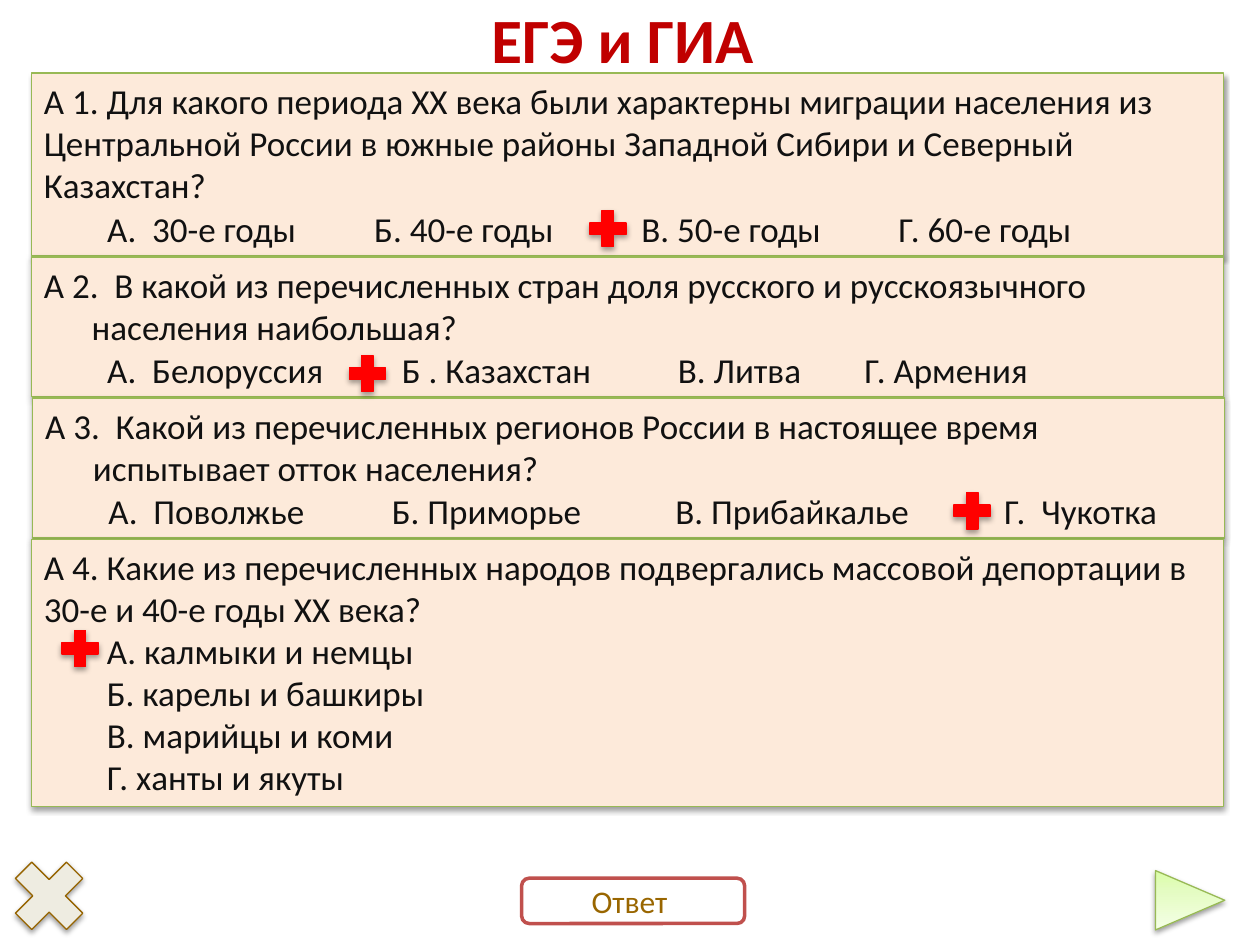
import pptx
import pptx.util
import pptx.dml.color
import pptx.enum.shapes
import pptx.enum.text
import pptx.oxml
import pptx.oxml.ns

HUE = {"title": "C00000", "card": "FDEADA", "edge": "98B955", "ink": "111111",
       "mark": "FF0000", "cross": "EEECE1", "brown": "966400", "white": "FFFFFF",
       "red": "C0504D", "label": "996600", "shade": "000000"}
FADE = ((0, "DAFDA7"), (35, "E4FCC2"), (100, "F5FFE7"))
KIND = pptx.enum.shapes.MSO_SHAPE
ALIGN = pptx.enum.text.PP_ALIGN
ANCHOR = pptx.enum.text.MSO_ANCHOR
NS = pptx.oxml.ns.nsdecls("a")

# Grid of 100 columns by 75 rows
CELL = pptx.util.Inches(0.1)
MARK = 3.9
LINE = 3.33
PAD = 0.5

# Left, top, height, question, hang, options, their columns (none: stacked),
# place of the mark; columns and marks count from the corner of the card
CARDS = (
    (2.5, 5.8, 14.5, "А 1. Для какого периода XX века были характерны миграции "
     "населения из Центральной России в южные районы Западной Сибири и Северный "
     "Казахстан?", 0,
     ("А.  30-е годы", "Б. 40-е годы", "В. 50-е годы", "Г. 60-е годы"),
     (6, 27.2, 48.4, 68.8), (43.8, 10.4)),
    (2.5, 20.4, 11.1, "А 2.  В какой из перечисленных стран доля русского и "
     "русскоязычного населения наибольшая?", 3.8,
     ("А.  Белоруссия", "Б . Казахстан", "В. Литва", "Г. Армения"),
     (6, 29.4, 51.3, 66.1), (24.7, 7.3)),
    (2.6, 31.6, 11.1, "А 3.  Какой из перечисленных регионов России в настоящее "
     "время испытывает отток населения?", 3.8,
     ("А.  Поволжье", "Б. Приморье", "В. Прибайкалье", "Г.  Чукотка"),
     (6, 28.5, 51, 77.1), (72.6, 7)),
    (2.5, 42.8, 21.2, "А 4. Какие из перечисленных народов подвергались массовой "
     "депортации в 30-е и 40-е годы XX века?", 0,
     ("А. калмыки и немцы", "Б. карелы и башкиры", "В. марийцы и коми",
      "Г. ханты и якуты"), (), (1.9, 6.7)),
)


def span(num):
    return pptx.util.Emu(round(num * CELL))


def rgb(name):
    return pptx.dml.color.RGBColor.from_string(HUE[name])


def put(item, **form):
    for key, val in form.items():
        setattr(item, key, val)


def shade(shape, alpha=38, dist=1.6):
    """Cast a soft shadow straight down."""
    cast = pptx.oxml.parse_xml(
        f'<a:outerShdw {NS} blurRad="39370" dist="{round(dist * 12700)}" dir="5400000" '
        f'rotWithShape="0"><a:srgbClr val="{HUE["shade"]}">'
        f'<a:alpha val="{alpha * 1000}"/></a:srgbClr></a:outerShdw>')
    shape._element.spPr.find(pptx.oxml.ns.qn("a:effectLst")).append(cast)


def draw(shapes, kind, box, fill, line, width=0.75):
    shape = shapes.add_shape(kind, *map(span, box))
    shape.shadow.inherit = False
    shape.fill.solid()
    shape.fill.fore_color.rgb = rgb(fill)
    shape.line.color.rgb = rgb(line)
    shape.line.width = pptx.util.Pt(width)
    return shape


def write(para, text, size, hue, bold=False, align=ALIGN.LEFT):
    para.alignment = align
    run = para.add_run()
    run.text = text
    put(run.font, name="Calibri", size=pptx.util.Pt(size), bold=bold)
    run.font.color.rgb = rgb(hue)


def indent(para, left, first):
    props = para._p.get_or_add_pPr()
    props.set("marL", str(span(left)))
    props.set("indent", str(span(first)))


def head(shapes, box):
    frame = shapes.add_textbox(*map(span, box)).text_frame
    put(frame, word_wrap=True, vertical_anchor=ANCHOR.MIDDLE)
    para = frame.paragraphs[0]
    para.line_spacing = pptx.util.Pt(32)
    write(para, "ЕГЭ и ГИА", 36, "title", True, ALIGN.CENTER)


def card(shapes, box, ask, hang):
    """Draw the panel with its question and return its text frame."""
    shape = draw(shapes, KIND.RECTANGLE, box, "card", "edge")
    shade(shape)
    frame = shape.text_frame
    put(frame, word_wrap=True, vertical_anchor=ANCHOR.TOP)
    indent(frame.paragraphs[0], hang, -hang)
    write(frame.paragraphs[0], ask, 20, "ink")
    return frame


def stack(frame, picks):
    for pick in picks:
        para = frame.add_paragraph()
        indent(para, 8.8, -3.8)
        write(para, pick, 20, "ink")


def row(shapes, box, picks, cols):
    """Set the options side by side on the last line of a card."""
    left, top, wide, high = box
    ends = (*cols[1:], wide)
    for pick, col, end in zip(picks, cols, ends):
        place = (left + col, top + high - PAD - LINE, end - col, LINE)
        frame = shapes.add_textbox(*map(span, place)).text_frame
        put(frame, word_wrap=False, vertical_anchor=ANCHOR.TOP, margin_left=0,
            margin_right=0, margin_top=0, margin_bottom=0)
        write(frame.paragraphs[0], pick, 20, "ink")


def quiz(shapes):
    group = shapes.add_group_shape().shapes
    for left, top, high, ask, hang, picks, cols, _ in CARDS:
        box = (left, top, 94.6, high)
        frame = card(group, box, ask, hang)
        if cols:
            row(group, box, picks, cols)
        else:
            stack(frame, picks)
    for left, top, *_, (col, drop) in CARDS:
        box = (left + col, top + drop, MARK, MARK)
        shade(draw(shapes, KIND.MATH_PLUS, box, "mark", "mark"), 35, 1.8)


def arrow(shapes, box):
    shape = draw(shapes, KIND.PENTAGON, box, "card", "edge")
    shape.adjustments[0] = 1.167
    shape.rotation = 180
    props = shape._element.spPr
    props.xfrm.set("flipH", "1")
    stops = "".join(f'<a:gs pos="{pos * 1000}"><a:srgbClr val="{hue}"/></a:gs>'
                    for pos, hue in FADE)
    fade = pptx.oxml.parse_xml(
        f'<a:gradFill {NS} rotWithShape="1"><a:gsLst>{stops}</a:gsLst>'
        '<a:lin ang="16200000" scaled="1"/></a:gradFill>')
    props.replace(props.find(pptx.oxml.ns.qn("a:solidFill")), fade)
    shade(shape)


def button(shapes, box):
    shape = draw(shapes, KIND.ROUNDED_RECTANGLE, box, "white", "red", 2)
    frame = shape.text_frame
    put(frame, word_wrap=True, vertical_anchor=ANCHOR.MIDDLE)
    write(frame.paragraphs[0], "Ответ ", 18, "label", align=ALIGN.CENTER)


def main():
    deck = pptx.Presentation()
    put(deck, slide_width=span(100), slide_height=span(75))
    shapes = deck.slides.add_slide(deck.slide_layouts[6]).shapes
    shade(draw(shapes, KIND.MATH_MULTIPLY, (0, 67.2, 7.8, 7.8), "cross", "brown"))
    arrow(shapes, (91.7, 69.1, 5.5, 4.7))
    head(shapes, (0, 0, 98.8, 7.6))
    quiz(shapes)
    button(shapes, (41.4, 69.7, 17.7, 3.6))
    deck.save("out.pptx")


if __name__ == "__main__":
    main()
